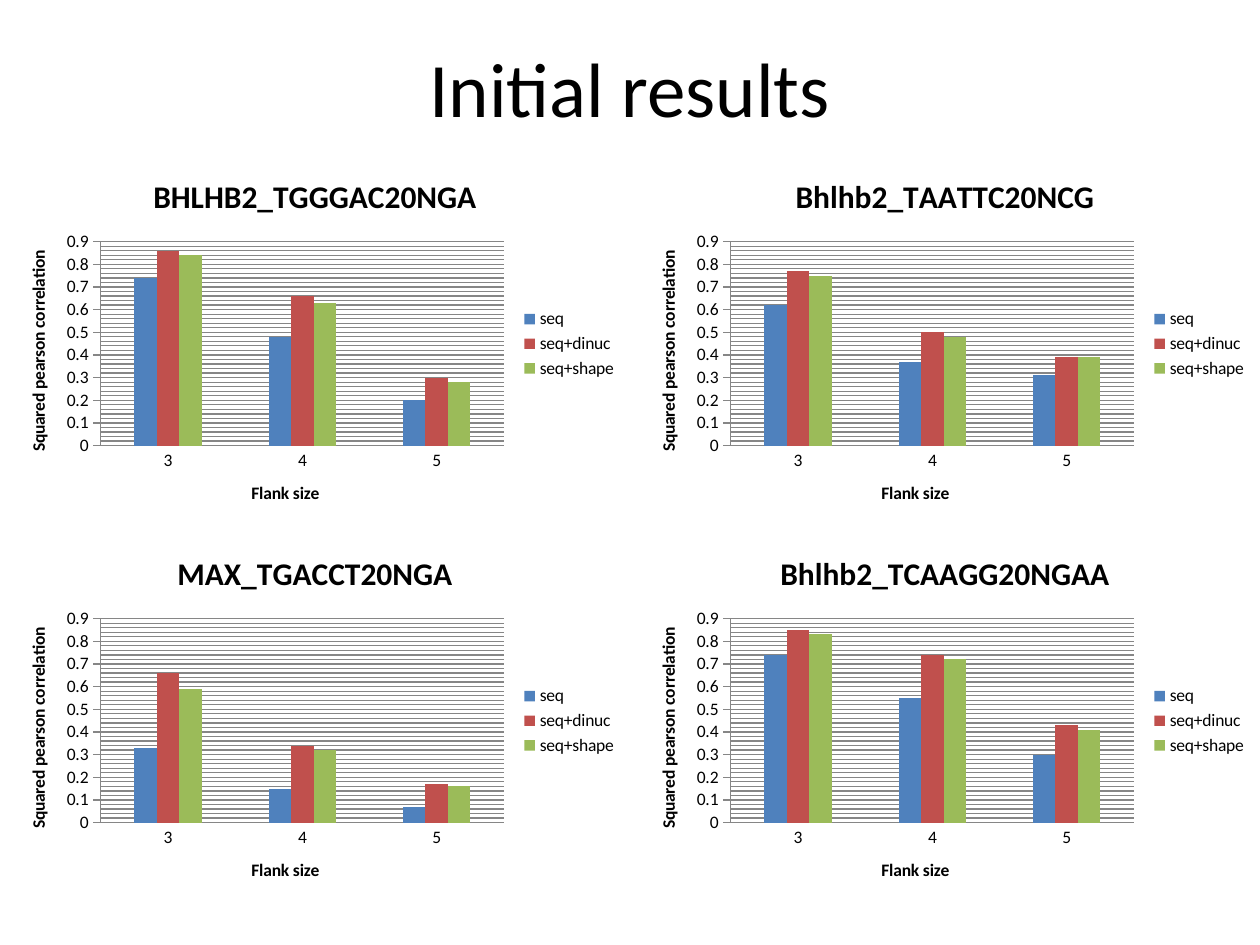
from lxml import etree
from pptx import Presentation
from pptx import util as u
from pptx.chart.data import CategoryChartData
from pptx.dml.color import RGBColor
from pptx.enum import chart as ch, text
from pptx.oxml.ns import qn

# Content
TITLE = "Initial results"
FLANK_SIZES = ["3", "4", "5"]
MODELS = ["seq", "seq+dinuc", "seq+shape"]
X_TITLE, Y_TITLE = "Flank size", "Squared pearson correlation"
# Rows and columns of the chart grid; one list of values per model
RESULTS = [
    [("BHLHB2_TGGGAC20NGA", [[0.74, 0.48, 0.2], [0.86, 0.66, 0.3], [0.84, 0.63, 0.28]]),
     ("Bhlhb2_TAATTC20NCG", [[0.62, 0.37, 0.31], [0.77, 0.5, 0.39], [0.75, 0.48, 0.39]])],
    [("MAX_TGACCT20NGA", [[0.33, 0.15, 0.07], [0.66, 0.34, 0.17], [0.59, 0.32, 0.16]]),
     ("Bhlhb2_TCAAGG20NGAA", [[0.74, 0.55, 0.3], [0.85, 0.74, 0.43], [0.83, 0.72, 0.41]])],
]

THEME = {
    "font": "Calibri", "ink": "000000", "line": "868686",
    "series": ["4F81BD", "C0504D", "9BBB59"],
    "title": 44, "chart_title": 18, "label": 10,
}

# Layout, in centimetres
SLIDE_W, SLIDE_H = 25.4, 19.05
CHART_W, CHART_H, CHART_TOP = SLIDE_W / 2, 7.62, 3.12
ROW_STEP = 7.6
PLOT = {"x": 0.16, "y": 0.23, "w": 0.64, "h": 0.54}  # shares of the chart


def style_font(font, size, bold=False):
    font.name, font.size, font.bold = THEME["font"], u.Pt(size), bold
    font.color.rgb = RGBColor.from_string(THEME["ink"])


def style_line(line):
    line.color.rgb = RGBColor.from_string(THEME["line"])
    line.width = u.Pt(0.75)


def set_title(owner, words, size):
    frame = (owner.chart_title if hasattr(owner, "chart_title") else owner.axis_title).text_frame
    frame.text = words
    style_font(frame.paragraphs[0].runs[0].font, size, bold=True)


def place_plot(chart):
    area = chart._chartSpace.find(".//" + qn("c:plotArea"))
    for old in area.findall(qn("c:layout")):
        area.remove(old)
    layout = etree.Element(qn("c:layout"))
    manual = etree.SubElement(layout, qn("c:manualLayout"))
    settings = {"layoutTarget": "inner", "xMode": "edge", "yMode": "edge", **PLOT}
    for name, value in settings.items():
        etree.SubElement(manual, qn("c:" + name)).set("val", str(value))
    area.insert(0, layout)


def add_result(page, row, column, name, values):
    data = CategoryChartData()
    data.categories = FLANK_SIZES
    for model, numbers in zip(MODELS, values):
        data.add_series(model, numbers)
    chart = page.shapes.add_chart(
        ch.XL_CHART_TYPE.COLUMN_CLUSTERED,
        u.Cm(column * CHART_W), u.Cm(CHART_TOP + row * ROW_STEP),
        u.Cm(CHART_W), u.Cm(CHART_H), data).chart
    style_font(chart.font, THEME["label"])
    set_title(chart, name, THEME["chart_title"])
    chart.chart_title._element.find(qn("c:overlay")).set("val", "1")
    place_plot(chart)

    # Columns
    plot = chart.plots[0]
    plot.gap_width, plot.overlap, plot.vary_by_categories = 300, 0, False
    for series, color in zip(plot.series, THEME["series"]):
        series.format.fill.solid()
        series.format.fill.fore_color.rgb = RGBColor.from_string(color)

    # Axes
    sizes, scores = chart.category_axis, chart.value_axis
    for axis, words in ((sizes, X_TITLE), (scores, Y_TITLE)):
        set_title(axis, words, THEME["label"])
        style_line(axis.format.line)
    sizes.major_tick_mark = ch.XL_TICK_MARK.NONE
    scores.major_tick_mark = ch.XL_TICK_MARK.CROSS
    scores.minimum_scale, scores.maximum_scale = 0, 0.9
    scores.major_unit, scores.minor_unit = 0.1, 0.02
    scores.has_major_gridlines = scores.has_minor_gridlines = True
    style_line(scores.major_gridlines.format.line)
    minor = scores._element.find(qn("c:minorGridlines"))
    minor.append(etree.fromstring(etree.tostring(
        scores._element.find(qn("c:majorGridlines")).find(qn("c:spPr")))))

    # Legend
    chart.has_legend = True
    chart.legend.position = ch.XL_LEGEND_POSITION.RIGHT
    chart.legend.include_in_layout = False
    style_font(chart.legend.font, THEME["label"])


def main():
    deck = Presentation()
    deck.slide_width, deck.slide_height = u.Cm(SLIDE_W), u.Cm(SLIDE_H)
    page = deck.slides.add_slide(deck.slide_layouts[6])

    # Heading
    box = page.shapes.add_textbox(u.Cm(1.27), u.Cm(0.15), u.Cm(22.86), u.Cm(3.18))
    frame = box.text_frame
    frame.word_wrap = True
    frame.vertical_anchor = text.MSO_ANCHOR.MIDDLE
    frame.text = TITLE
    para = frame.paragraphs[0]
    para.alignment = text.PP_ALIGN.CENTER
    style_font(para.runs[0].font, THEME["title"])

    # Chart grid
    for row, results in enumerate(RESULTS):
        for column, (name, values) in enumerate(results):
            add_result(page, row, column, name, values)
    deck.save("out.pptx")


if __name__ == "__main__":
    main()
